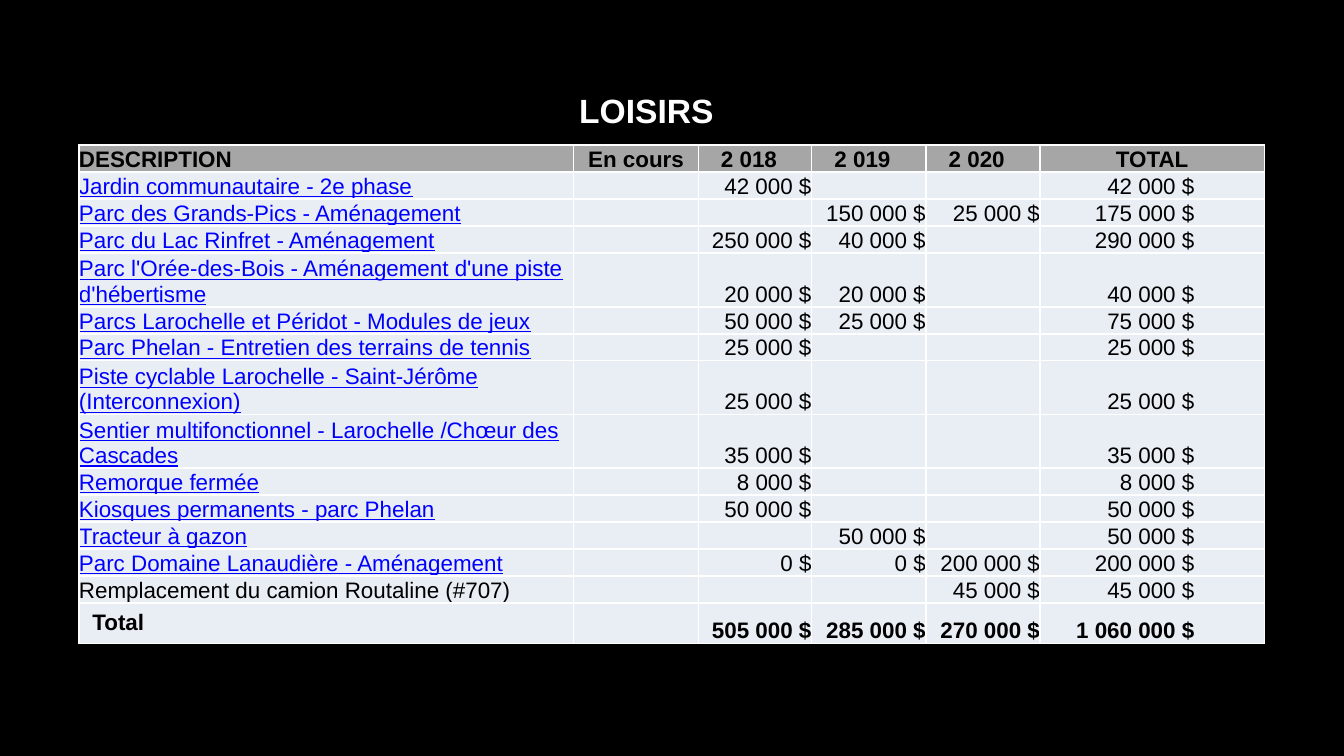
from lxml.etree import SubElement
from pptx import Presentation
from pptx.dml.color import RGBColor
from pptx.enum.text import MSO_ANCHOR, MSO_AUTO_SIZE, PP_ALIGN
from pptx.oxml import parse_xml
from pptx.oxml.ns import nsdecls, qn
from pptx.util import Pt

BLACK = RGBColor(0x00, 0x00, 0x00)
WHITE = RGBColor(0xFF, 0xFF, 0xFF)
HEADER_GREY = RGBColor(0xA6, 0xA6, 0xA6)
ROW_BLUE = RGBColor(0xE9, 0xED, 0xF4)
LINK_BLUE = RGBColor(0x00, 0x00, 0xFF)

HEADINGS = ["DESCRIPTION", "En cours", "2 018", "2 019", "2 020", "TOTAL"]
COLUMN_WIDTHS = [265, 67, 60.5, 61.2, 61.2, 120.2]
ROW_HEIGHT, WRAPPED_HEIGHT, TOTAL_HEIGHT = 14.3, 27, 20.4
WRAP_LENGTH = 50
YEAR_INSET = 6.6
TOTAL_INSET = 37.5

PROJECTS = [
    ("Jardin communautaire - 2e phase", 42000, None, None),
    ("Parc des Grands-Pics - Aménagement", None, 150000, 25000),
    ("Parc du Lac Rinfret - Aménagement", 250000, 40000, None),
    ("Parc l'Orée-des-Bois - Aménagement d'une piste d'hébertisme", 20000, 20000, None),
    ("Parcs Larochelle et Péridot - Modules de jeux", 50000, 25000, None),
    ("Parc Phelan - Entretien des terrains de tennis", 25000, None, None),
    ("Piste cyclable Larochelle - Saint-Jérôme (Interconnexion)", 25000, None, None),
    ("Sentier multifonctionnel - Larochelle /Chœur des Cascades", 35000, None, None),
    ("Remorque fermée", 8000, None, None),
    ("Kiosques permanents - parc Phelan", 50000, None, None),
    ("Tracteur à gazon", None, 50000, None),
    ("Parc Domaine Lanaudière - Aménagement", 0, 0, 200000),
    ("Remplacement du camion Routaline (#707)", None, None, 45000),
]


def dollars(amount):
    return "" if amount is None else f"{amount:,} $".replace(",", " ")


class BudgetSlide:
    font_name = "Arial"
    title_size = 18
    table_size = 12

    def __init__(self, presentation):
        self.slide = presentation.slides.add_slide(presentation.slide_layouts[5])
        background = self.slide.background.fill
        background.solid()
        background.fore_color.rgb = BLACK

    def text_run(self, paragraph, text, size, color, bold=False, underline=False):
        run = paragraph.add_run()
        run.text = text
        font = run.font
        font.name = self.font_name
        font.size = Pt(size)
        font.color.rgb = color
        font.bold = bold
        font.underline = underline

    def title(self, text, left, top, width, height):
        heading = self.slide.shapes.title
        heading.left, heading.top = Pt(left), Pt(top)
        heading.width, heading.height = Pt(width), Pt(height)
        frame = heading.text_frame
        frame.word_wrap = False
        frame.auto_size = MSO_AUTO_SIZE.SHAPE_TO_FIT_TEXT
        frame.vertical_anchor = MSO_ANCHOR.TOP
        frame.paragraphs[0].alignment = PP_ALIGN.LEFT
        self.text_run(frame.paragraphs[0], text, self.title_size, WHITE, bold=True)

    def table(self, left, top, widths, heights):
        grid = self.slide.shapes.add_table(
            len(heights), len(widths), Pt(left), Pt(top), Pt(sum(widths)), Pt(sum(heights))
        ).table
        grid.first_row = grid.horz_banding = False
        for column, width in zip(grid.columns, widths):
            column.width = Pt(width)
        for row, height in zip(grid.rows, heights):
            row.height = Pt(height)
        return grid

    def cell(self, cell, text, fill=ROW_BLUE, color=BLACK, align=PP_ALIGN.LEFT,
             anchor=MSO_ANCHOR.BOTTOM, insets=(0, 0, 0, 0), bold=False, underline=False):
        cell.fill.solid()
        cell.fill.fore_color.rgb = fill
        cell.vertical_anchor = anchor
        cell.margin_left, cell.margin_top, cell.margin_right, cell.margin_bottom = map(Pt, insets)
        paragraph = cell.text_frame.paragraphs[0]
        paragraph.alignment = align
        if text:
            self.text_run(paragraph, text, self.table_size, color, bold, underline)
        else:
            SubElement(paragraph._p, qn("a:endParaRPr"), sz=str(self.table_size * 100))
        self.borders(cell)

    def borders(self, cell):
        properties = cell._tc.get_or_add_tcPr()
        for position, side in enumerate("LRTB"):
            properties.insert(position, parse_xml(
                f'<a:ln{side} {nsdecls("a")} w="{Pt(1)}"><a:solidFill>'
                f'<a:srgbClr val="{WHITE}"/></a:solidFill></a:ln{side}>'
            ))

    def amounts(self, cells, yearly, bold=False):
        self.cell(cells[1], "")
        for cell, amount in zip(cells[2:5], yearly):
            self.cell(cell, dollars(amount), align=PP_ALIGN.RIGHT, bold=bold)
        self.cell(cells[5], dollars(sum(amount or 0 for amount in yearly)),
                  align=PP_ALIGN.RIGHT, insets=(0, 0, TOTAL_INSET, 0), bold=bold)


def main():
    presentation = Presentation()
    presentation.slide_width, presentation.slide_height = Pt(720), Pt(405)
    budget = BudgetSlide(presentation)
    budget.title("LOISIRS", 303.1, 44.6, 92.2, 28.8)

    project_heights = [
        WRAPPED_HEIGHT if len(name) > WRAP_LENGTH else ROW_HEIGHT for name, *_ in PROJECTS
    ]
    grid = budget.table(42.3, 77.8, COLUMN_WIDTHS, [ROW_HEIGHT, *project_heights, TOTAL_HEIGHT])
    header, *project_rows, total_row = [list(row.cells) for row in grid.rows]

    for cell, heading in zip(header, HEADINGS):
        align = PP_ALIGN.LEFT if heading == "DESCRIPTION" else PP_ALIGN.CENTER
        inset = YEAR_INSET if heading.startswith("2") else 0
        budget.cell(cell, heading, HEADER_GREY, align=align, insets=(0, 0, inset, 0), bold=True)

    for cells, (name, *yearly) in zip(project_rows, PROJECTS):
        linked = name != PROJECTS[-1][0]
        budget.cell(cells[0], name, color=LINK_BLUE if linked else BLACK, underline=linked)
        budget.amounts(cells, yearly)

    yearly_totals = [
        sum(amount or 0 for amount in year) for year in list(zip(*PROJECTS))[1:]
    ]
    budget.cell(total_row[0], "Total", anchor=MSO_ANCHOR.TOP,
                insets=(7.2, 3.6, 7.2, 3.6), bold=True)
    budget.amounts(total_row, yearly_totals, bold=True)

    presentation.save("out.pptx")


if __name__ == "__main__":
    main()
